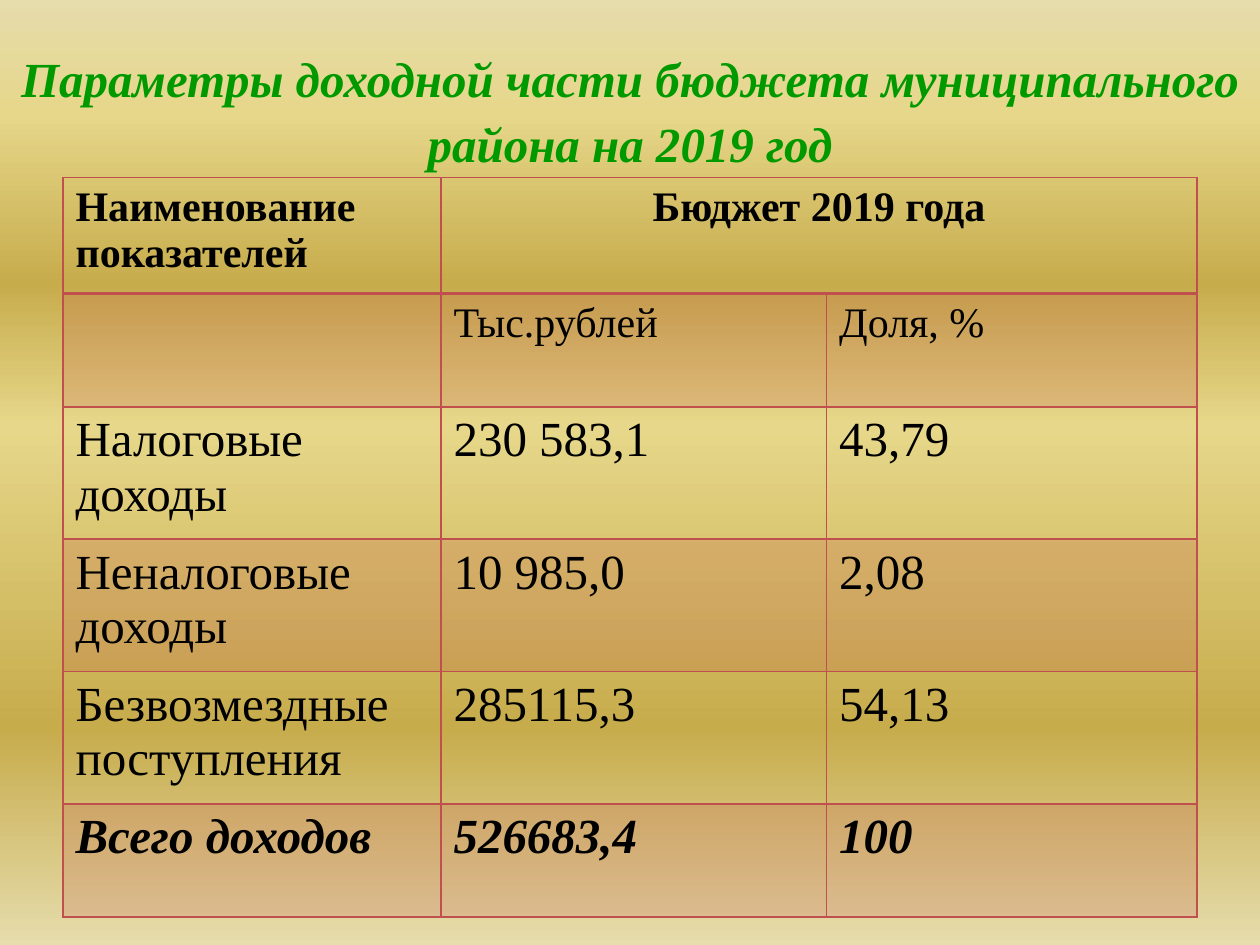
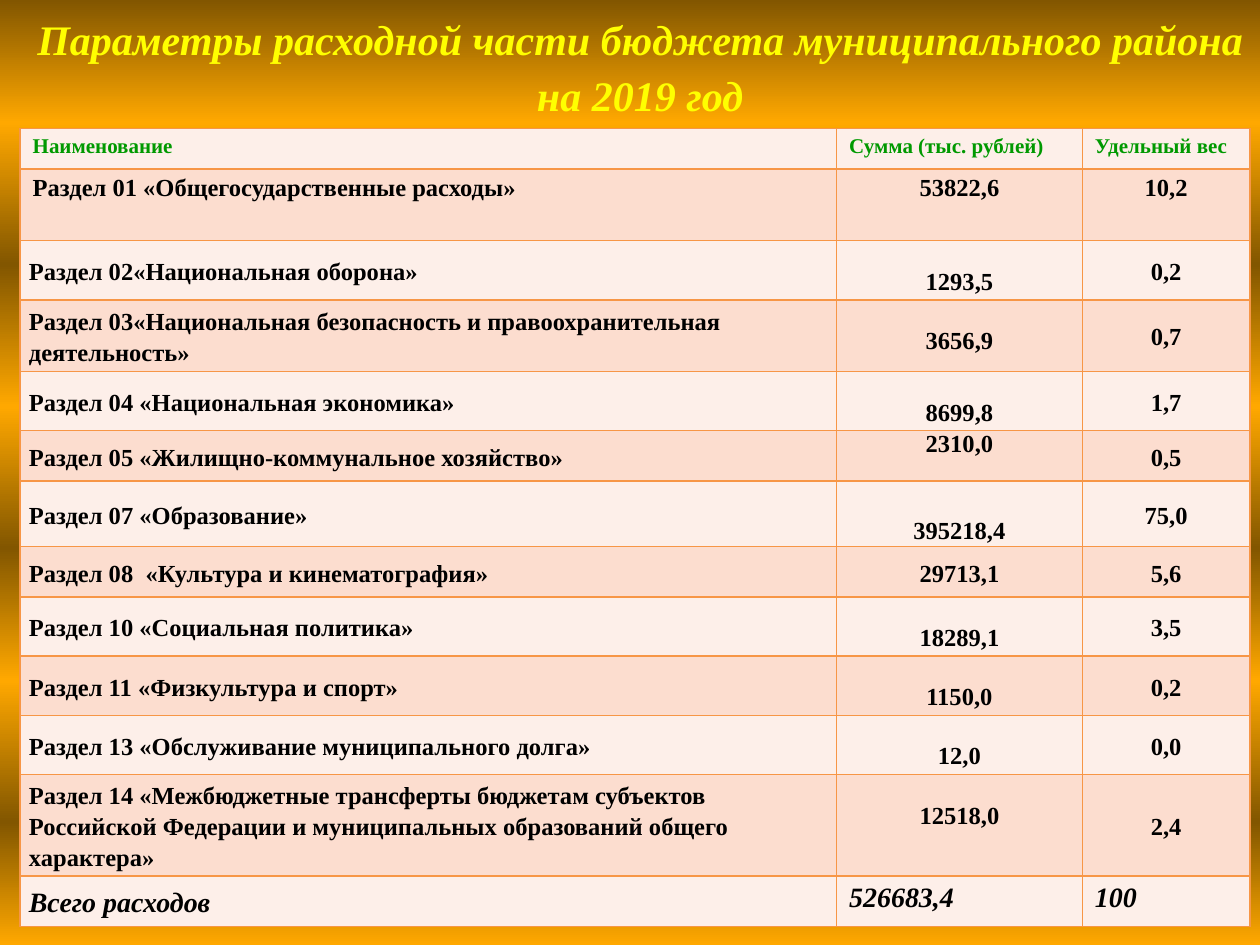
import pptx
import pptx.util
import pptx.dml.color
import pptx.enum.text
import pptx.oxml
import pptx.oxml.ns
import lxml.etree

INCOME_ROWS = [
    ("Наименование показателей", "Бюджет 2019 года", ""),
    ("", "Тыс.рублей", "Доля, %"),
    ("Налоговые доходы", "230 583,1", "43,79"),
    ("Неналоговые доходы", "10 985,0", "2,08"),
    ("Безвозмездные поступления", "285115,3", "54,13"),
    ("Всего доходов", "526683,4", "100"),
]
INCOME_FORMATS = [
    ("income_head", "income_span", "income_head"),
    ("income_units",) * 3,
    *[("income_value",) * 3] * 3,
    ("income_total",) * 3,
]

EXPENSE_ROWS = [
    ("Наименование", "Сумма (тыс. рублей)", "Удельный вес"),
    ("Раздел 01 «Общегосударственные расходы»", "53822,6", "10,2"),
    ("Раздел 02«Национальная оборона»", "1293,5", "0,2"),
    ("Раздел 03«Национальная безопасность и правоохранительная деятельность»", "3656,9", "0,7"),
    ("Раздел 04 «Национальная экономика»", "8699,8", "1,7"),
    ("Раздел 05 «Жилищно-коммунальное хозяйство»", "2310,0", "0,5"),
    ("Раздел 07 «Образование»", "395218,4", "75,0"),
    ("Раздел 08  «Культура и кинематография»", "29713,1", "5,6"),
    ("Раздел 10 «Социальная политика»", "18289,1", "3,5"),
    ("Раздел 11 «Физкультура и спорт»", "1150,0", "0,2"),
    ("Раздел 13 «Обслуживание муниципального долга»", "12,0", "0,0"),
    ("Раздел 14 «Межбюджетные трансферты бюджетам субъектов Российской Федерации "
     "и муниципальных образований общего характера»", "12518,0", "2,4"),
    ("Всего расходов", "526683,4", "100"),
]
SUM_FORMATS = ["sum_low"] * 3 + ["sum_top", "sum_low_middle", "share"] + ["sum_low"] * 4
EXPENSE_FORMATS = [
    ("expense_head",) * 3,
    ("first_section", "first_value", "first_value"),
    *[("section", sum_format, "share") for sum_format in SUM_FORMATS],
    ("total_name", "total_value", "total_value"),
]

SLIDES = [
    {
        "title": "Параметры доходной части бюджета муниципального района на 2019 год",
        "title_box": (0, 0.23, 10, 1.25), "title_format": "income_title",
        "gradient": [(0, "E6DCAC"), (12, "E6D78A"), (30, "C7AC4C"),
                     (45, "E6D78A"), (77, "C7AC4C"), (100, "E6DCAC")],
        "rows": INCOME_ROWS, "formats": INCOME_FORMATS,
        "table_at": (0.5, 1.41),
        "columns": [3, 3.06, 2.94],
        "heights": [0.92, 0.9, 1.05, 1.05, 1.05, 0.9],
        "bands": "income_bands", "border": "income_border",
        "head_rule": 2, "merge": ((0, 1), (0, 2)),
    },
    {
        "title": "Параметры расходной части бюджета муниципального района на 2019 год",
        "title_box": (0.16, 0, 9.84, 1.02), "title_format": "expense_title",
        "gradient": [(stop, ("825600", "FFA800")[i % 2])
                     for i, stop in enumerate((0, 13, 28, 43, 58, 72, 87, 100))],
        "rows": EXPENSE_ROWS, "formats": EXPENSE_FORMATS,
        "table_at": (0.16, 1.02),
        "columns": [6.48, 1.95, 1.33],
        "heights": [0.32, 0.57, 0.47, 0.57, 0.47, 0.4, 0.52, 0.4,
                    0.47, 0.47, 0.47, 0.79, 0.4],
        "bands": "expense_bands", "border": "expense_border",
        "head_rule": 1, "merge": None,
    },
]

LEFT, CENTER = pptx.enum.text.PP_ALIGN.LEFT, pptx.enum.text.PP_ALIGN.CENTER
TOP, MIDDLE = pptx.enum.text.MSO_ANCHOR.TOP, pptx.enum.text.MSO_ANCHOR.MIDDLE
ROOMY, TIGHT = (0.1, 0.05, 0.1, 0.05), (0.07, 0, 0.07, 0)
LOW, LOW_MIDDLE = (0.07, 0.22, 0.07, 0), (0.07, 0.25, 0.07, 0)


def text_format(size, color="000000", bold=True, italic=False, align=LEFT,
                anchor=TOP, spacing=1.0, insets=ROOMY):
    return {
        "font": {"name": "Times New Roman", "size": pptx.util.Pt(size),
                 "bold": bold, "italic": italic},
        "color": color,
        "paragraph": {"alignment": align, "line_spacing": spacing},
        "anchor": anchor,
        "insets": insets,
    }


def title_format(size, color):
    return text_format(size, color, italic=True, align=CENTER, anchor=MIDDLE, spacing=1.1)


THEME = {
    "income_bands": [None, ("C0504D", 20)],
    "expense_bands": [("FDEFE9", 100), ("FCDDCF", 100)],
    "income_border": "C0504D",
    "expense_border": "F79646",
    "income_title": title_format(28, "009900"),
    "expense_title": title_format(24, "FFFF00"),
    "income_head": text_format(24),
    "income_span": text_format(24, align=CENTER),
    "income_units": text_format(24, bold=False),
    "income_value": text_format(28, bold=False),
    "income_total": text_format(28, italic=True),
    "expense_head": text_format(12, "009900"),
    "first_section": text_format(14),
    "first_value": text_format(14, align=CENTER),
    "section": text_format(14, anchor=MIDDLE, spacing=1.15, insets=TIGHT),
    "share": text_format(14, align=CENTER, anchor=MIDDLE, spacing=1.15, insets=TIGHT),
    "sum_top": text_format(14, align=CENTER, insets=TIGHT),
    "sum_low": text_format(14, align=CENTER, insets=LOW),
    "sum_low_middle": text_format(14, align=CENTER, anchor=MIDDLE, spacing=1.15,
                                  insets=LOW_MIDDLE),
    "total_name": text_format(16, italic=True, anchor=MIDDLE, spacing=1.15, insets=TIGHT),
    "total_value": text_format(16, italic=True),
}


def set_attributes(target, values):
    for name, value in values.items():
        setattr(target, name, value)


def add_child(parent, tag, **attributes):
    return lxml.etree.SubElement(parent, pptx.oxml.ns.qn(tag), attributes)


def write_text(holder, tf, text, style):
    holder.vertical_anchor = style["anchor"]
    sides = ("margin_left", "margin_top", "margin_right", "margin_bottom")
    set_attributes(holder, dict(zip(sides, map(pptx.util.Inches, style["insets"]))))
    p = tf.paragraphs[0]
    set_attributes(p, style["paragraph"])
    if text:
        r = p.add_run()
        r.text = text
        set_attributes(r.font, style["font"])
        r.font.color.rgb = pptx.dml.color.RGBColor.from_string(style["color"])


def paint_background(s, stops):
    fill = s.background.fill
    fill.gradient()
    fill.gradient_angle = 270
    gradient = s.background._cSld.find(".//" + pptx.oxml.ns.qn("a:gradFill"))
    stop_list = gradient.find(pptx.oxml.ns.qn("a:gsLst"))
    for old in list(stop_list):
        stop_list.remove(old)
    for position, color in stops:
        stop = add_child(stop_list, "a:gs", pos=str(position * 1000))
        add_child(stop, "a:srgbClr", val=color)


def add_title(s, data):
    sp = s.shapes.add_textbox(*map(pptx.util.Inches, data["title_box"]))
    tf = sp.text_frame
    tf.word_wrap = True
    write_text(tf, tf, data["title"], THEME[data["title_format"]])


def draw_borders(cell, color, widths):
    tc_pr = cell._tc.get_or_add_tcPr()
    for side, width in widths.items():
        line = add_child(tc_pr, "a:ln" + side, w=str(pptx.util.Pt(width)))
        add_child(add_child(line, "a:solidFill"), "a:srgbClr", val=color)


def fill_cell(cell, band):
    if band is None:
        cell.fill.background()
        return
    color, opacity = band
    cell.fill.solid()
    cell.fill.fore_color.rgb = pptx.dml.color.RGBColor.from_string(color)
    if opacity < 100:
        srgb = cell._tc.tcPr.find(pptx.oxml.ns.qn("a:solidFill"))[0]
        add_child(srgb, "a:alpha", val=str(opacity * 1000))


def add_budget_table(s, data):
    columns, heights = data["columns"], data["heights"]
    box = (*data["table_at"], sum(columns), sum(heights))
    table = s.shapes.add_table(len(heights), len(columns),
                               *map(pptx.util.Inches, box)).table
    set_attributes(table, {"first_row": False, "horz_banding": False})
    for column, width in zip(table.columns, columns):
        column.width = pptx.util.Inches(width)
    for row, height in zip(table.rows, heights):
        row.height = pptx.util.Inches(height)
    if data["merge"]:
        first, last = data["merge"]
        table.cell(*first).merge(table.cell(*last))
    bands = THEME[data["bands"]]
    for i, (texts, formats) in enumerate(zip(data["rows"], data["formats"])):
        widths = {"L": 1, "R": 1,
                  "T": data["head_rule"] if i == 1 else 1,
                  "B": data["head_rule"] if i == 0 else 1}
        for j, (text, name) in enumerate(zip(texts, formats)):
            cell = table.cell(i, j)
            write_text(cell, cell.text_frame, text, THEME[name])
            draw_borders(cell, THEME[data["border"]], widths)
            fill_cell(cell, bands[i % 2])


def main():
    prs = pptx.Presentation()
    prs.slide_width, prs.slide_height = pptx.util.Inches(10), pptx.util.Inches(7.5)
    for data in SLIDES:
        s = prs.slides.add_slide(prs.slide_layouts[6])
        paint_background(s, data["gradient"])
        add_title(s, data)
        add_budget_table(s, data)
    prs.save("out.pptx")


if __name__ == "__main__":
    main()
